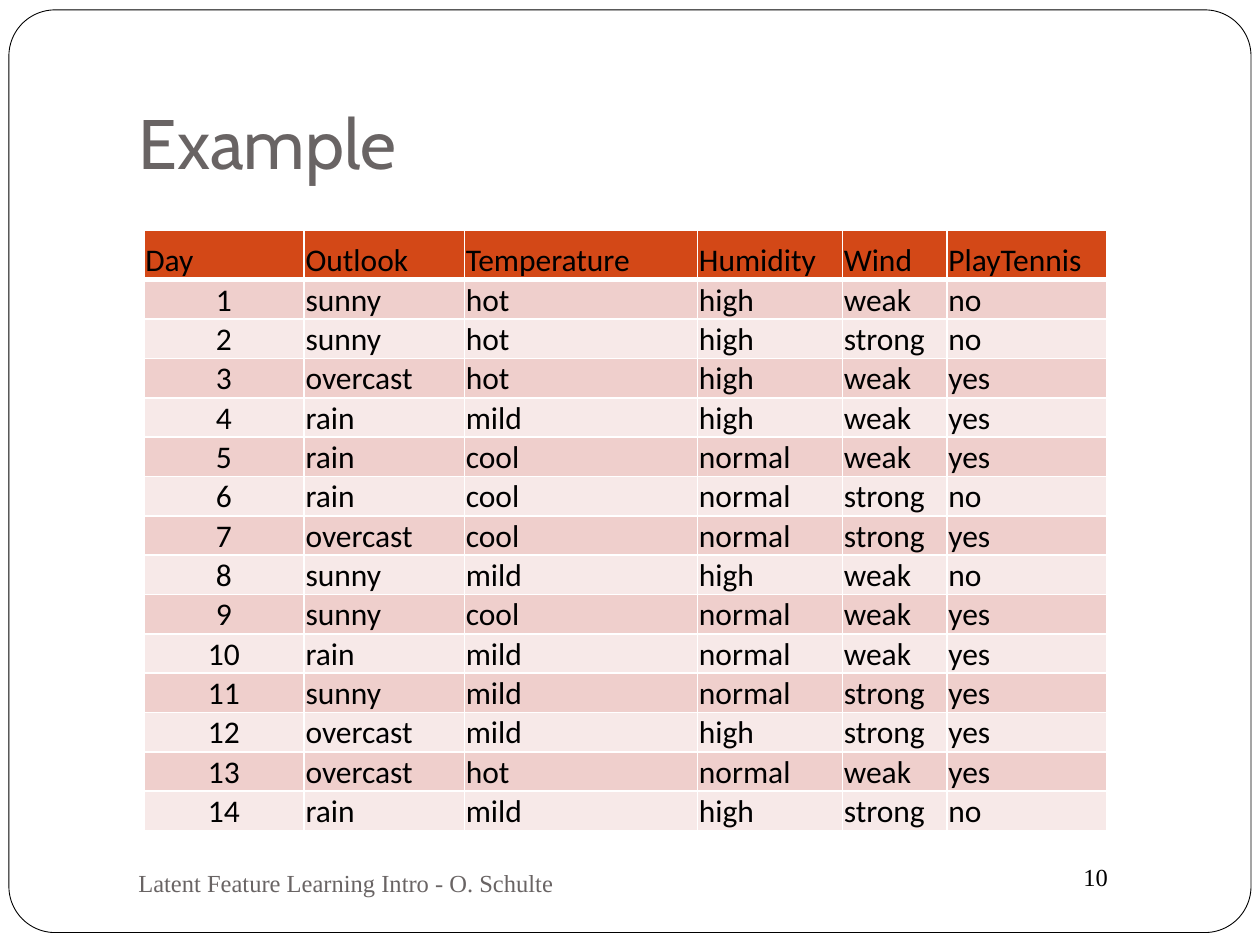
from dataclasses import dataclass

from lxml.etree import SubElement as Sub
from pptx import Presentation
from pptx.dml.color import RGBColor as RGB
from pptx.enum.shapes import MSO_SHAPE as Form
from pptx.enum.text import MSO_ANCHOR as Anchor, MSO_AUTO_SIZE as Auto, PP_ALIGN as Align
from pptx.oxml.ns import qn
from pptx.util import Cm, Pt

WHITE = RGB(0xFF, 0xFF, 0xFF)
BLACK = RGB(0x00, 0x00, 0x00)
GREY = RGB(0x69, 0x64, 0x64)
RUST = RGB(0xD3, 0x48, 0x17)
ROSE = RGB(0xEF, 0xCF, 0xCC)
PALE = RGB(0xF7, 0xE9, 0xE8)
SERIF = "Times New Roman"


@dataclass
class Column:
    name: str
    width: float
    align: Align = Align.LEFT


@dataclass
class Label:
    text: str
    box: tuple[float, float, float, float]
    color: RGB
    anchor: Anchor


COLUMNS = [
    Column("Day", 3.23, Align.CENTER),
    Column("Outlook", 3.23),
    Column("Temperature", 4.7),
    Column("Humidity", 2.92),
    Column("Wind", 2.11),
    Column("PlayTennis", 3.23),
]
DAYS = """sunny hot high weak no
sunny hot high strong no
overcast hot high weak yes
rain mild high weak yes
rain cool normal weak yes
rain cool normal strong no
overcast cool normal strong yes
sunny mild high weak no
sunny cool normal weak yes
rain mild normal weak yes
sunny mild normal strong yes
overcast mild high strong yes
overcast hot normal weak yes
rain mild high strong no""".splitlines()
LABELS = [
    Label("10", (21.59, 17.25, 2.54, 0.86), BLACK, Anchor.TOP),
    Label("Latent Feature Learning Intro - O. Schulte",
          (2.54, 17.15, 11, 1.27), GREY, Anchor.MIDDLE),
]


def write(frame, text: str, *, size: float, font: str, color: RGB,
          align: Align = Align.LEFT) -> None:
    frame.text = text
    par = frame.paragraphs[0]
    par.alignment = align
    style = par.runs[0].font
    style.size, style.name = Pt(size), font
    style.color.rgb = color


def add_frame(slide) -> None:
    shape = slide.shapes.add_shape(
        Form.ROUNDED_RECTANGLE, Cm(0.18), Cm(0.2), Cm(25.04), Cm(18.6))
    shape.adjustments[0] = 0.05
    shape.shadow.inherit = False
    shape.fill.solid()
    shape.fill.fore_color.rgb = WHITE
    shape.line.color.rgb = BLACK
    shape.line.width = Pt(0.5)


def add_title(slide, text: str) -> None:
    title = slide.shapes.title
    title.left, title.top = Cm(2.54), Cm(0.76)
    title.width, title.height = Cm(21.59), Cm(3.18)
    frame = title.text_frame
    frame.auto_size = Auto.NONE
    frame.vertical_anchor = Anchor.BOTTOM
    frame.margin_bottom = Cm(0.25)
    write(frame, text, size=40, font="Cabin", color=GREY)
    # Bring the title in front of the frame
    slide.shapes.element.append(title.element)


def add_label(slide, label: Label) -> None:
    frame = slide.shapes.add_textbox(*map(Cm, label.box)).text_frame
    frame.word_wrap = True
    frame.vertical_anchor = label.anchor
    write(frame, label.text, size=14, font=SERIF, color=label.color)


def set_edges(cell, base: float) -> None:
    props = cell._tc.get_or_add_tcPr()
    for side, width in zip("LRTB", (1, 1, 1, base)):
        line = Sub(props, qn(f"a:ln{side}"), w=str(Pt(width)))
        Sub(Sub(line, qn("a:solidFill")), qn("a:srgbClr"), val=str(WHITE))


def fill_cell(cell, text: str, *, fill: RGB, align: Align, base: float) -> None:
    cell.margin_left = cell.margin_right = cell.margin_top = Cm(0.03)
    cell.margin_bottom = 0
    cell.vertical_anchor = Anchor.BOTTOM
    set_edges(cell, base)
    cell.fill.solid()
    cell.fill.fore_color.rgb = fill
    write(cell.text_frame, text, size=18, font="Calibri", color=BLACK, align=align)


def add_days(slide) -> None:
    rows = [[col.name for col in COLUMNS]]
    rows += [[str(day), *line.split()] for day, line in enumerate(DAYS, 1)]
    width = sum(col.width for col in COLUMNS)
    table = slide.shapes.add_table(
        len(rows), len(COLUMNS), Cm(2.9), Cm(4.65), Cm(width), Cm(11.35)).table
    for part, col in zip(table.columns, COLUMNS):
        part.width = Cm(col.width)
    for r, row in enumerate(rows):
        head = r == 0
        table.rows[r].height = Cm(0.99 if head else 0.74)
        fill = RUST if head else ROSE if r % 2 else PALE
        for c, (text, col) in enumerate(zip(row, COLUMNS)):
            fill_cell(table.cell(r, c), text, fill=fill,
                      align=Align.LEFT if head else col.align,
                      base=3 if head else 1)


def main() -> None:
    deck = Presentation()
    deck.slide_width, deck.slide_height = Cm(25.4), Cm(19.05)
    slide = deck.slides.add_slide(deck.slide_layouts.get_by_name("Title Only"))
    add_frame(slide)
    add_title(slide, "Example")
    for label in LABELS:
        add_label(slide, label)
    add_days(slide)
    deck.save("out.pptx")


if __name__ == "__main__":
    main()
